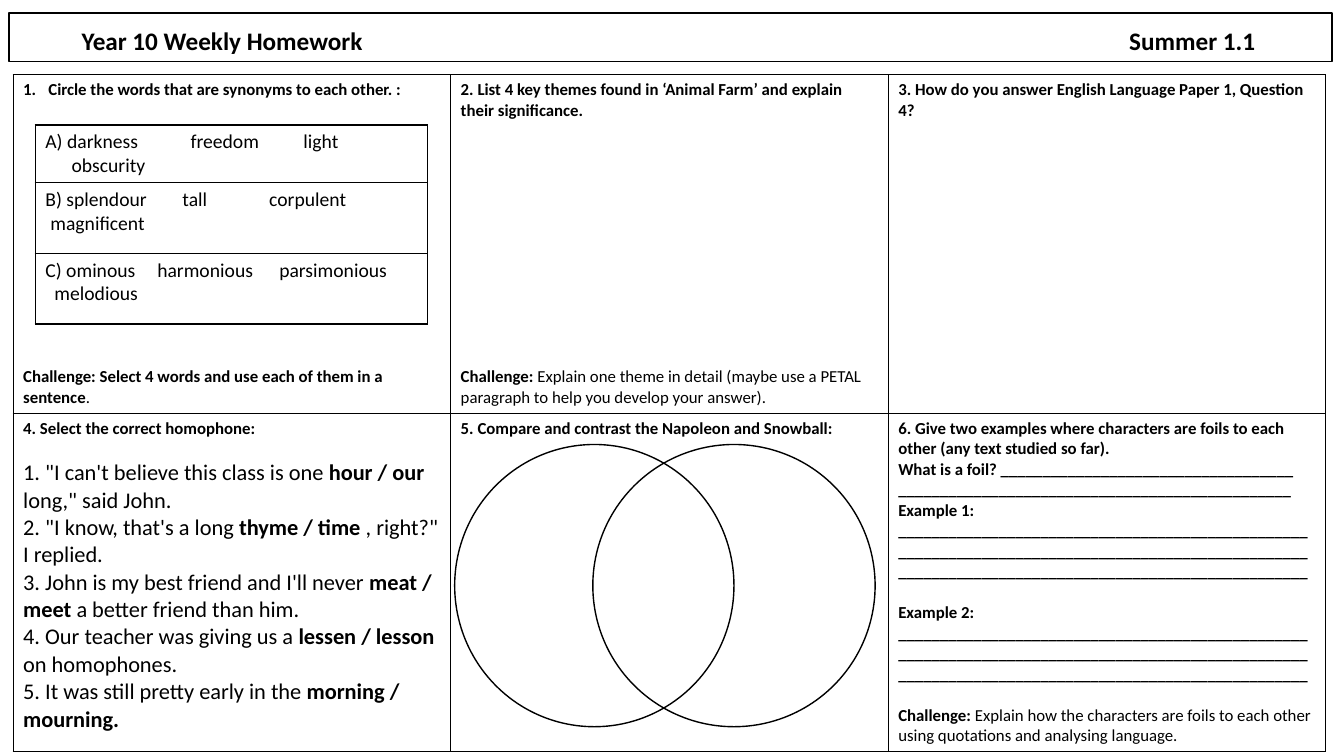
from dataclasses import dataclass

from lxml.etree import SubElement as Sub
from pptx import Presentation
from pptx.dml.color import RGBColor as RGB
from pptx.enum.shapes import MSO_SHAPE as Shape
from pptx.enum.text import MSO_ANCHOR as Anchor, MSO_AUTO_SIZE as Fit, PP_ALIGN as Align
from pptx.oxml.ns import qn
from pptx.util import Inches, Pt


@dataclass(frozen=True)
class Theme:
    font: str = "Calibri"
    ink: RGB = RGB(0, 0, 0)
    paper: RGB = RGB(255, 255, 255)
    head: int = 18
    body: int = 12
    word: int = 14
    story: int = 16
    rule: int = 1
    step: float = 14.65


@dataclass
class Para:
    text: str
    size: int = Theme.body
    gap: int = 0
    left: float = 0
    tabs: tuple = ()
    num: bool = False


class Sheet:
    """Draws the elements of one homework slide in a shared style."""

    def __init__(self, slide, theme):
        self.slide, self.theme = slide, theme

    def text(self, frame, paras):
        for i, item in enumerate(paras):
            para = frame.add_paragraph() if i else frame.paragraphs[0]
            self.style(para, item)
            parts = [(t, n % 2 == 1) for n, t in enumerate(item.text.split("*")) if t]
            for words, bold in parts:
                run = para.add_run()
                run.text = words
                if len(parts) > 1:
                    run.font.bold = bold
                else:
                    para.font.bold = bold

    def style(self, para, item):
        props = para._p.get_or_add_pPr()
        if item.left:
            props.set("marL", str(Inches(item.left)))
        if item.num:
            props.set("indent", str(-Inches(item.left)))
            Sub(props, qn("a:buFont"), typeface="+mj-lt")
            Sub(props, qn("a:buAutoNum"), type="arabicPeriod")
        if item.tabs:
            stops = Sub(props, qn("a:tabLst"))
            for pos, kind in item.tabs:
                Sub(stops, qn("a:tab"), pos=str(Inches(pos)), algn=kind)
        if item.gap:
            para.space_before = Pt(item.gap * self.theme.step)
        font = para.font
        font.name, font.size = self.theme.font, Pt(item.size)
        font.color.rgb = self.theme.ink

    def edge(self, shape):
        shape.line.color.rgb = self.theme.ink
        shape.line.width = Pt(self.theme.rule)

    def paint(self, shape):
        shape.fill.solid()
        shape.fill.fore_color.rgb = self.theme.paper

    def title(self, box, para):
        shape = self.slide.shapes.title
        shape.left, shape.top, shape.width, shape.height = map(Inches, box)
        self.paint(shape)
        self.edge(shape)
        frame = shape.text_frame
        frame.auto_size = Fit.NONE
        frame.vertical_anchor = Anchor.BOTTOM
        frame.margin_left = Inches(0.72)
        self.text(frame, [para])
        frame.paragraphs[0].alignment = Align.LEFT
        frame.paragraphs[0].line_spacing = 0.9

    def ring(self, box, solid):
        shape = self.slide.shapes.add_shape(Shape.OVAL, *map(Inches, box))
        shape.shadow.inherit = False
        if solid:
            self.paint(shape)
        else:
            shape.fill.background()
        self.edge(shape)

    def grid(self, left, top, width, rows, cells):
        cols = len(cells[0])
        table = self.slide.shapes.add_table(
            len(rows), cols, Inches(left), Inches(top),
            Inches(width * cols), Inches(sum(rows))).table
        table.first_row = table.horz_banding = False
        for col in table.columns:
            col.width = Inches(width)
        for r, high in enumerate(rows):
            table.rows[r].height = Inches(high)
            for c, paras in enumerate(cells[r]):
                cell = table.cell(r, c)
                self.frame(cell)
                cell.fill.background()
                self.text(cell.text_frame, paras)

    def frame(self, cell):
        props = cell._tc.get_or_add_tcPr()
        for side in ("lnL", "lnR", "lnT", "lnB"):
            line = Sub(props, qn(f"a:{side}"), w=str(Pt(self.theme.rule)))
            fill = Sub(line, qn("a:solidFill"))
            Sub(fill, qn("a:srgbClr"), val=str(self.theme.ink))


def words(first, stops, last, left):
    tabs = tuple((pos, "l") for pos in stops)
    return [[Para("\t".join(first), Theme.word, tabs=tabs),
             Para(last, Theme.word, left=left)]]


def blank(count):
    return "*" + "_" * count + "*"


def main():
    deck = Presentation()
    deck.slide_width, deck.slide_height = Inches(13.33), Inches(7.5)
    sheet = Sheet(deck.slides.add_slide(deck.slide_layouts[5]), Theme())

    sheet.title((0.09, 0.13, 13.12, 0.48),
                Para("*Year 10 Weekly Homework\tSummer 1.1*", Theme.head,
                     tabs=((11.64, "r"),)))

    story = [
        "1. \"I can't believe this class is one *hour / our* long,\" said John.",
        "2. \"I know, that's a long *thyme / time* , right?\" I replied.",
        "3. John is my best friend and I'll never *meat / meet *a better friend than him.",
        "4. Our teacher was giving us a* lessen / lesson* on homophones.",
        "5. It was still pretty early in the *morning / mourning.*",
    ]
    tasks = [
        [
            [Para("*Circle the words that are synonyms to each other. :*",
                  left=0.25, num=True),
             Para("*Challenge: Select 4 words and use each of them in a sentence*.",
                  gap=13)],
            [Para("*2. List 4 key themes found in ‘Animal Farm’ and explain "
                  "their significance.*"),
             Para("*Challenge: *Explain one theme in detail (maybe use a PETAL "
                  "paragraph to help you develop your answer).", gap=12)],
            [Para("*3. How do you answer English Language Paper 1, Question 4?*")],
        ],
        [
            [Para("*4. Select the correct homophone:*")]
            + [Para(text, Theme.story, gap=int(i == 0)) for i, text in enumerate(story)],
            [Para("*5. Compare and contrast the Napoleon and Snowball:*")],
            [Para("*6. Give two examples where characters are foils to each other "
                  "(any text studied so far).*"),
             Para("*What is a foil? " + "_" * 35 + "*"),
             Para(blank(47)),
             Para("*Example 1:*"), Para(blank(147)),
             Para("*Example 2:*", gap=1), Para(blank(147)),
             Para("*Challenge: *Explain how the characters are foils to each other "
                  "using quotations and analysing language.", gap=1)],
        ],
    ]
    sheet.grid(0.13, 0.74, 4.34, (3.36, 3.22), tasks)

    sheet.ring((4.51, 4.41, 2.77, 2.8), True)
    sheet.ring((5.88, 4.41, 2.8, 2.8), False)

    sheet.grid(0.35, 1.24, 3.89, (0.56, 0.7, 0.7), [
        words(("A) darkness", "freedom", "light"), (1.44, 2.56), "obscurity", 0.26),
        words(("B) splendour", "tall", "corpulent"), (1.36, 2.22), "magnificent", 0.05),
        words(("C) ominous", "harmonious", "parsimonious"), (1.11, 2.32),
              "melodious", 0.09),
    ])
    deck.save("out.pptx")


if __name__ == "__main__":
    main()
